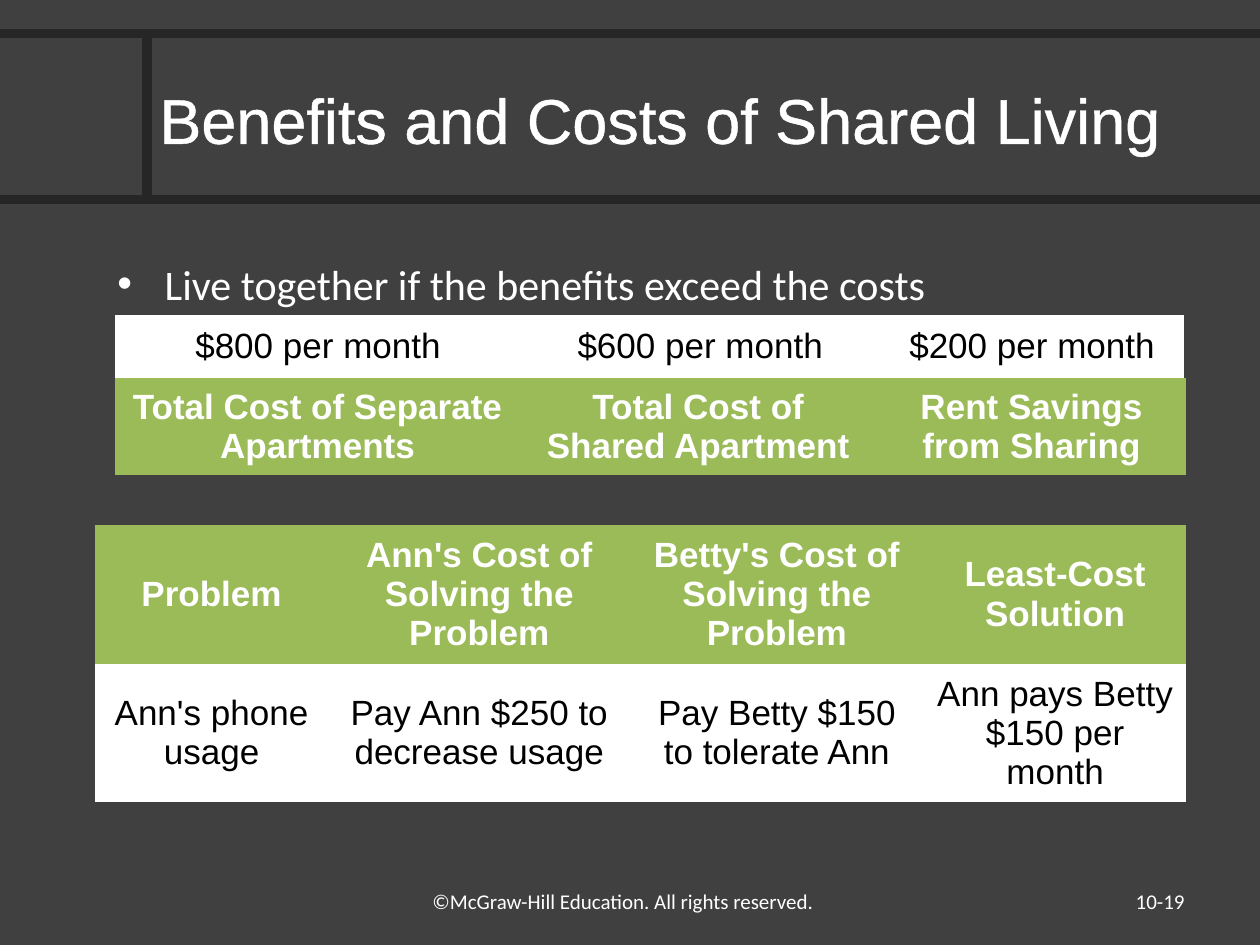
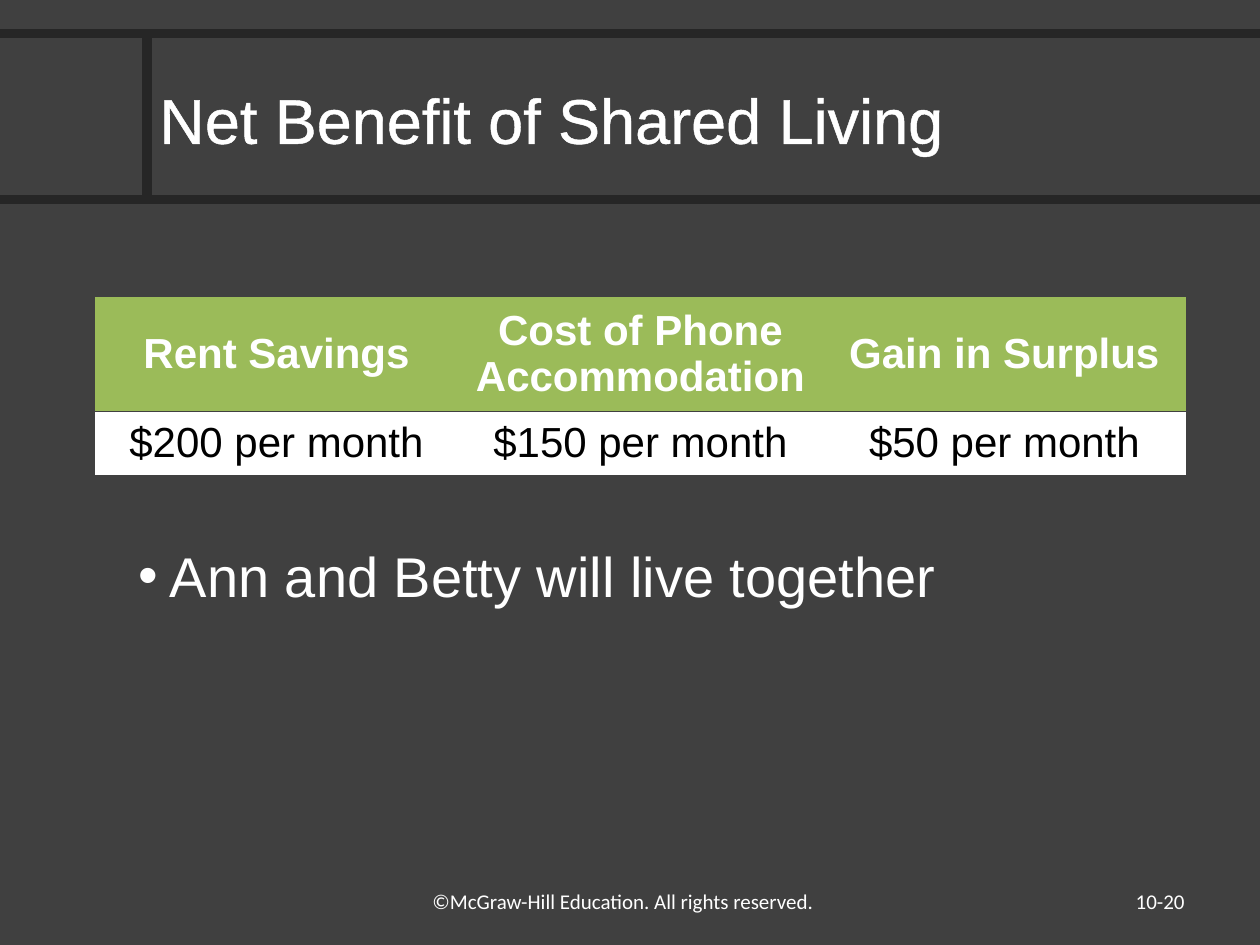
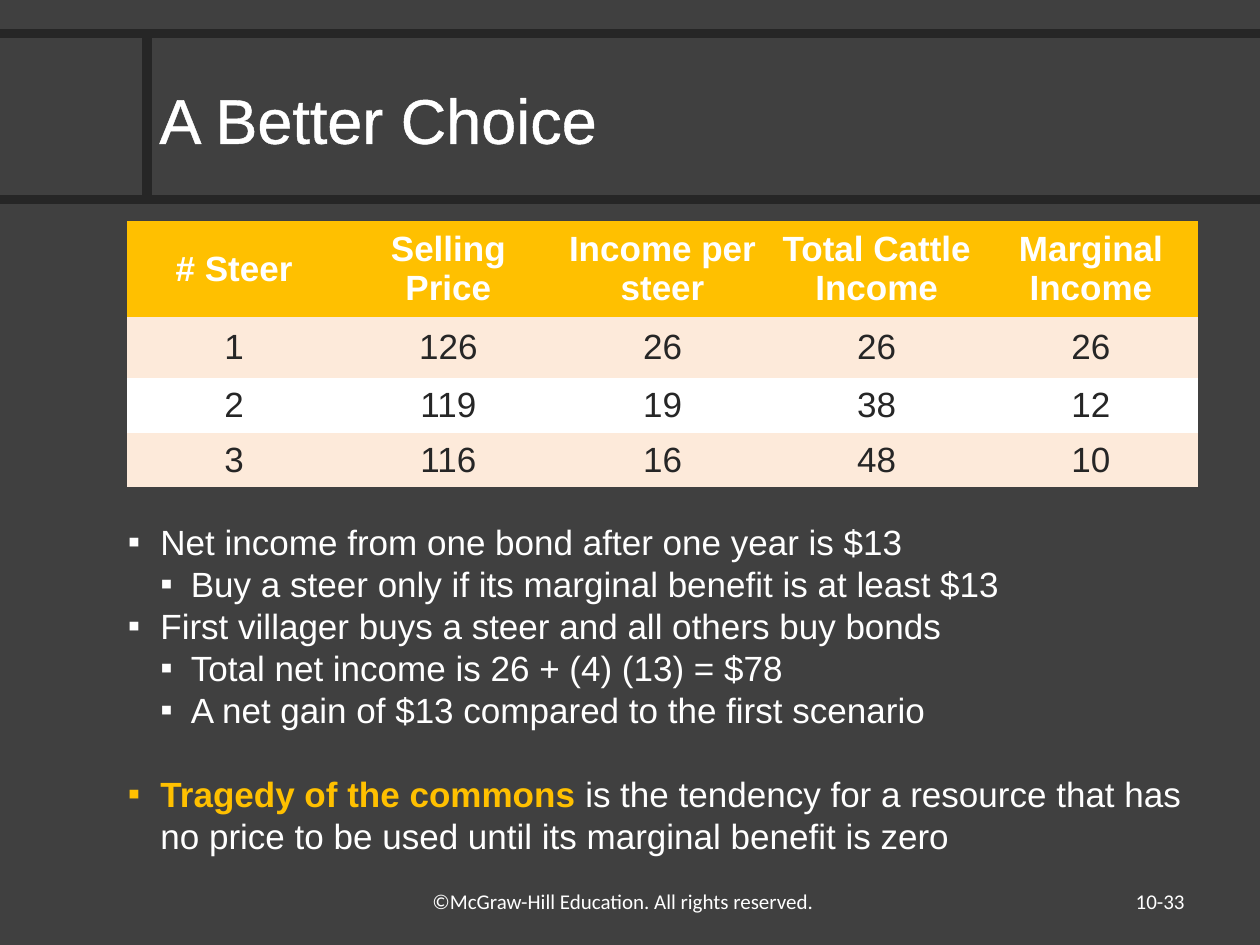
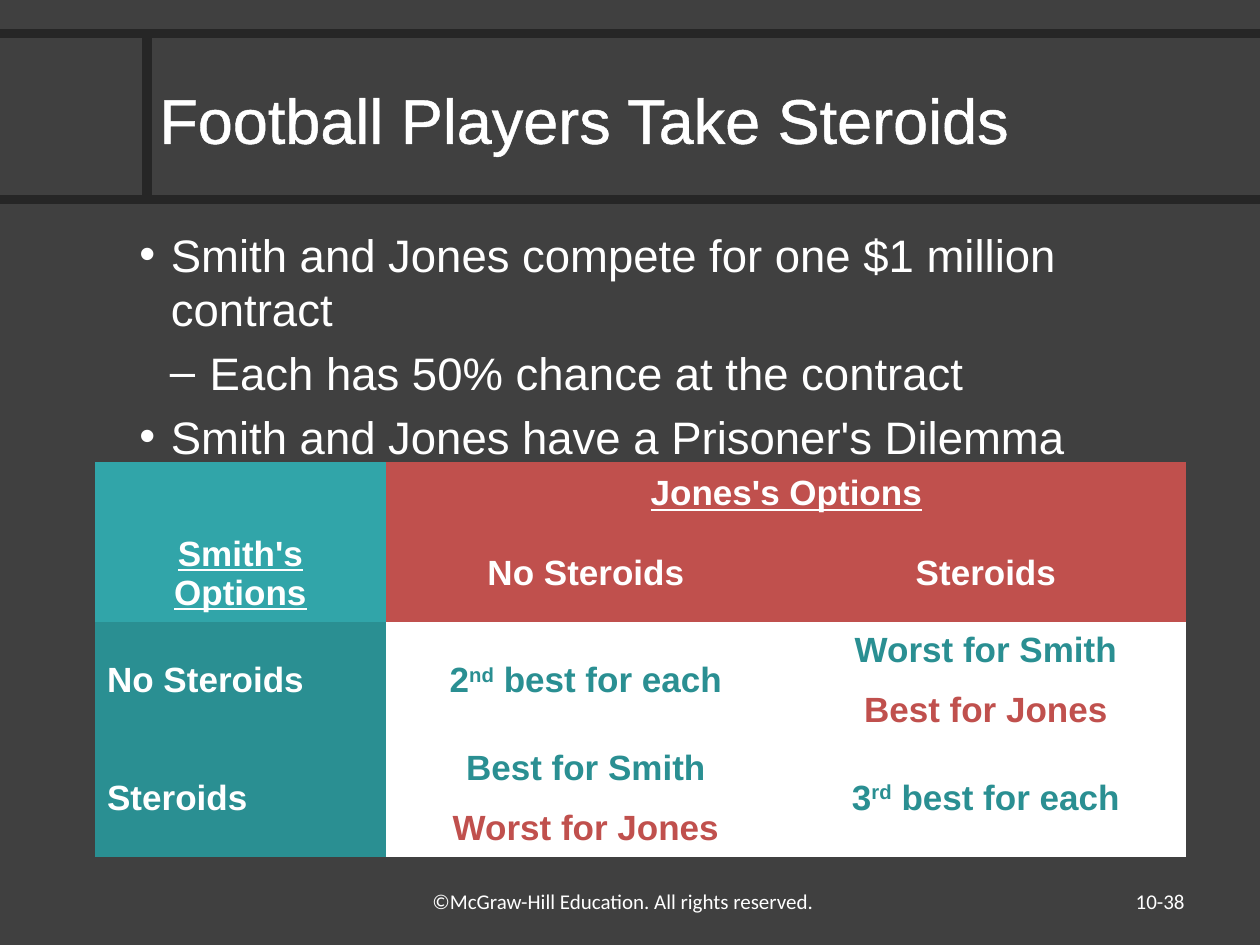
from dataclasses import dataclass
from lxml import etree
from pptx import Presentation
from pptx.dml.color import RGBColor
from pptx.enum.shapes import MSO_CONNECTOR
from pptx.enum.text import MSO_ANCHOR, PP_ALIGN
from pptx.oxml.ns import qn
from pptx.util import Inches, Pt

LEFT, CENTER, RIGHT = PP_ALIGN.LEFT, PP_ALIGN.CENTER, PP_ALIGN.RIGHT
TOP, MIDDLE = MSO_ANCHOR.TOP, MSO_ANCHOR.MIDDLE
STRAIGHT = MSO_CONNECTOR.STRAIGHT
PLAIN_TABLE = "{2D5ABB26-0587-4C30-8999-92F81FD0307C}"
COLUMNS, ROWS = 120, 90


@dataclass(frozen=True)
class Theme:
    """Colours, fonts, type sizes and bullet levels shared by the deck."""
    ground: str = "404040"
    rule: str = "262626"
    white: str = "FFFFFF"
    black: str = "000000"
    green: str = "9BBB59"
    gold: str = "FFC000"
    peach: str = "FDEADA"
    teal: str = "31A5A9"
    deep_teal: str = "2A8F92"
    red: str = "C0504D"
    heading: str = "Arial"
    plain: str = "Calibri"
    title: int = 36
    large: int = 32
    body: int = 26
    medium: int = 24
    small: int = 20
    footer: int = 12
    rule_width: float = 5.5
    outline: float = 1.45
    dots: tuple = (("•", 3, 3), ("–", 6.7, 3.8))
    wide_dots: tuple = (("•", 4.5, 4.5),)
    squares: tuple = (("▪", 3.1, 3.1), ("▪", 6, 2.9))


THEME = Theme()


@dataclass
class Span:
    """A stretch of text that may differ from its paragraph."""
    text: str
    color: str = None
    bold: bool = None
    raised: bool = False


@dataclass
class Para:
    """Spans of one paragraph with its level and space before."""
    spans: list
    level: int = 0
    before: float = None


@dataclass
class Cell:
    """Text of one table cell with its fill and format."""
    text: object
    fill: str
    color: str = THEME.white
    bold: bool = True
    underline: bool = False
    align: int = CENTER
    across: int = 1


def across(count):
    """Return a length of that many grid columns (a 120th of the width)."""
    return Inches(10 * count / COLUMNS)


def down(count):
    """Return a length of that many grid rows (a 90th of the height)."""
    return Inches(7.5 * count / ROWS)


def add_bullet(para, mark, left, hang):
    """Give a paragraph a bullet and a hanging indent in columns."""
    properties = para._p.get_or_add_pPr()
    properties.set("marL", str(across(left)))
    properties.set("indent", str(-across(hang)))
    etree.SubElement(properties, qn("a:buFont"), typeface="Arial")
    etree.SubElement(properties, qn("a:buChar"), char=mark)


def write(frame, text, size=THEME.small, font=THEME.heading, color=THEME.white,
          bold=False, underline=False, align=LEFT, gap=0, bullets=(), outline=None):
    """Fill a text frame with a string or a list of strings and Paras."""
    for index, item in enumerate([text] if isinstance(text, str) else text):
        item = Para([Span(item)]) if isinstance(item, str) else item
        para = frame.add_paragraph() if index else frame.paragraphs[0]
        para.level = item.level
        if bullets:
            add_bullet(para, *bullets[item.level])
        para.alignment = align
        if index:
            para.space_before = Pt(gap if item.before is None else item.before)
        for span in item.spans:
            run = para.add_run()
            run.text = span.text
            run.font.size, run.font.name = Pt(size), font
            run.font.bold = bold if span.bold is None else span.bold
            run.font.underline = underline
            run.font.color.rgb = RGBColor.from_string(span.color or color)
            properties = run._r.get_or_add_rPr()
            if span.raised:
                properties.set("baseline", "30000")
            if outline:
                line = etree.Element(qn("a:ln"), w=str(Pt(outline)))
                fill = etree.SubElement(line, qn("a:solidFill"))
                etree.SubElement(fill, qn("a:srgbClr"), val=color)
                properties.insert(0, line)


class Slides:
    """Builds pages in one style on a grid of 120 columns and 90 rows."""

    def __init__(self, theme):
        """Start an empty deck with the shared background."""
        self.theme = theme
        self.deck = Presentation()
        self.deck.slide_width, self.deck.slide_height = across(COLUMNS), down(ROWS)
        ground = self.deck.slide_master.background.fill
        ground.solid()
        ground.fore_color.rgb = RGBColor.from_string(theme.ground)
        self.page = None

    def start(self, title, number):
        """Add a page with its rules, title, footer and number."""
        theme = self.theme
        self.page = self.deck.slides.add_slide(self.deck.slide_layouts[6])
        for ends in ((0, 19, COLUMNS, 19), (14, 3.2, 14, 19), (0, 3.2, COLUMNS, 3.2)):
            self.rule(*ends)
        self.text(title, 14, 3.6, 106, 15.4, anchor=MIDDLE, size=theme.title,
                  outline=theme.outline)
        footer = {"size": theme.footer, "font": theme.plain}
        self.text("©McGraw-Hill Education. All rights reserved.", 40, 84, 52, 4.2, **footer)
        self.text(number, 86, 83.4, 28, 4.8, anchor=MIDDLE, align=RIGHT, **footer)

    def rule(self, left, top, right, bottom):
        """Draw a dark rule between two grid points."""
        rule = self.page.shapes.add_connector(
            STRAIGHT, across(left), down(top), across(right), down(bottom))
        rule.line.color.rgb = RGBColor.from_string(self.theme.rule)
        rule.line.width = Pt(self.theme.rule_width)
        etree.SubElement(rule._element.spPr, qn("a:effectLst"))

    def text(self, text, left, top, width, height, anchor=TOP, **style):
        """Add a wrapping text box."""
        box = self.page.shapes.add_textbox(
            across(left), down(top), across(width), down(height))
        frame = box.text_frame
        frame.word_wrap = True
        frame.vertical_anchor = anchor
        write(frame, text, **style)

    def table(self, cells, left, top, widths, heights, size=THEME.small, gap=0):
        """Add a table from rows of Cells; None is covered by a merge."""
        table = self.page.shapes.add_table(
            len(heights), len(widths), across(left), down(top),
            across(sum(widths)), down(sum(heights))).table
        table.first_row = table.horz_banding = False
        table._tbl.tblPr.find(qn("a:tableStyleId")).text = PLAIN_TABLE
        for column, width in zip(table.columns, widths):
            column.width = across(width)
        for row, height in zip(table.rows, heights):
            row.height = down(height)
        for r, line in enumerate(cells):
            for c, cell in enumerate(line):
                if cell:
                    self.fill_cell(table, r, c, cell, size, gap)

    def fill_cell(self, table, r, c, cell, size, gap):
        """Merge, colour and write one table cell."""
        target = table.cell(r, c)
        if cell.across > 1:
            target.merge(table.cell(r, c + cell.across - 1))
        target.fill.solid()
        target.fill.fore_color.rgb = RGBColor.from_string(cell.fill)
        target.vertical_anchor = MIDDLE
        if cell.text:
            write(target.text_frame, cell.text, size=size, color=cell.color, bold=cell.bold,
                  underline=cell.underline, align=cell.align, gap=gap)


def header(texts, fill=THEME.green):
    """Return a row of bold white cells."""
    return [Cell(text, fill) for text in texts]


def values(texts, fill=THEME.white, color=THEME.black):
    """Return a row of plain dark cells."""
    return [Cell(text, fill, color, bold=False) for text in texts]


def shared_living(slides):
    """Build the page on benefits and costs."""
    slides.start("Benefits and Costs of Shared Living", "10-19")
    slides.table([values(["$800 per month", "$600 per month", "$200 per month"])],
                 11, 30, [38.6, 34.2, 29], [6])
    slides.table([header(["Total Cost of Separate Apartments",
                          "Total Cost of Shared Apartment", "Rent Savings from Sharing"])],
                 11, 36, [38.5, 34, 29.5], [8.6])
    slides.text("Live together if the benefits exceed the costs", 10, 24, 100, 6,
                size=THEME.medium, font=THEME.plain, bullets=THEME.wide_dots)
    problem_widths = [22.3, 28.7, 28, 25]
    slides.table([header(["Problem", "Ann's Cost of Solving the Problem",
                          "Betty's Cost of Solving the Problem", "Least-Cost Solution"])],
                 9, 50, problem_widths, [13.2])
    slides.table([values(["Ann's phone usage", "Pay Ann $250 to decrease usage",
                          "Pay Betty $150 to tolerate Ann",
                          "Ann pays Betty $150 per month"])],
                 9, 63.2, problem_widths, [13.2])


def net_benefit(slides):
    """Build the page on the gain in surplus."""
    slides.start("Net Benefit of Shared Living", "10-20")
    slides.text("Ann and Betty will live together", 12, 51, 102, 11,
                size=THEME.large, bullets=THEME.dots)
    thirds = [104 / 3] * 3
    slides.table([values(["$200 per month", "$150 per month", "$50 per month"])],
                 9, 39.2, thirds, [5.7], size=THEME.medium)
    slides.table([header(["Rent Savings", "Cost of Phone Accommodation", "Gain in Surplus"])],
                 9, 28.3, thirds, [10.1], size=THEME.medium)


def better_choice(slides):
    """Build the page on steers and bonds."""
    slides.start("A Better Choice", "10-33")
    steers = [(1, 126, 26, 26, 26), (2, 119, 19, 38, 12), (3, 116, 16, 48, 10)]
    rows = [header(["# Steer", "Selling Price", "Income per steer", "Total Cattle Income",
                    "Marginal Income"], THEME.gold)]
    for index, steer in enumerate(steers):
        fill = THEME.white if index % 2 else THEME.peach
        rows.append(values(map(str, steer), fill, THEME.rule))
    slides.table(rows, 12.1, 21, [20.4] * 5, [8.6, 5.8, 4.9, 4.9])
    slides.text([
        "Net income from one bond after one year is $13",
        Para([Span("Buy a steer only if its marginal benefit is at least $13")], 1),
        "First villager buys a steer and all others buy bonds",
        Para([Span("Total net income is 26 + (4) (13) = $78")], 1),
        Para([Span("A net gain of $13 compared to the first scenario")], 1),
        Para([Span("Tragedy of the commons ", THEME.gold, True),
              Span("is the tendency for a resource that has no price to be used until "
                   "its marginal benefit is zero")], before=24),
    ], 11, 49, 104, 33.2, bullets=THEME.squares)


def steroids(slides):
    """Build the page on the players' dilemma."""
    slides.start("Football Players Take Steroids", "10-38")
    slides.text([
        "Smith and Jones compete for one $1 million contract",
        Para([Span("Each has 50% chance at the contract")], 1),
        "Smith and Jones have a Prisoner's Dilemma",
    ], 12.1, 21, 102, 22, size=THEME.body, gap=5.2, bullets=THEME.dots)

    def option(text):
        return Cell(text, THEME.deep_teal, align=LEFT)

    def outcome(smith, jones):
        return Cell([smith, Para([Span(jones, THEME.red)])], THEME.white, THEME.deep_teal)

    def tie(rank, ending):
        spans = [Span(rank), Span(ending, raised=True), Span(" best for each")]
        return Cell([Para(spans)], THEME.white, THEME.deep_teal)

    slides.table([
        [Cell("", THEME.teal), Cell("Jones's Options", THEME.red, underline=True, across=2), None],
        [Cell("Smith's Options", THEME.teal, underline=True),
         *header(["No Steroids", "Steroids"], THEME.red)],
        [option("No Steroids"), tie("2", "nd"), outcome("Worst for Smith", "Best for Jones")],
        [option("Steroids"), outcome("Best for Smith", "Worst for Jones"), tie("3", "rd")],
    ], 9, 44, [27.8, 38, 38.2], [6, 8.6, 10.6, 10.6], gap=12)


def main():
    """Build and save the deck."""
    slides = Slides(THEME)
    for build in (shared_living, net_benefit, better_choice, steroids):
        build(slides)
    slides.deck.save("out.pptx")


if __name__ == "__main__":
    main()
